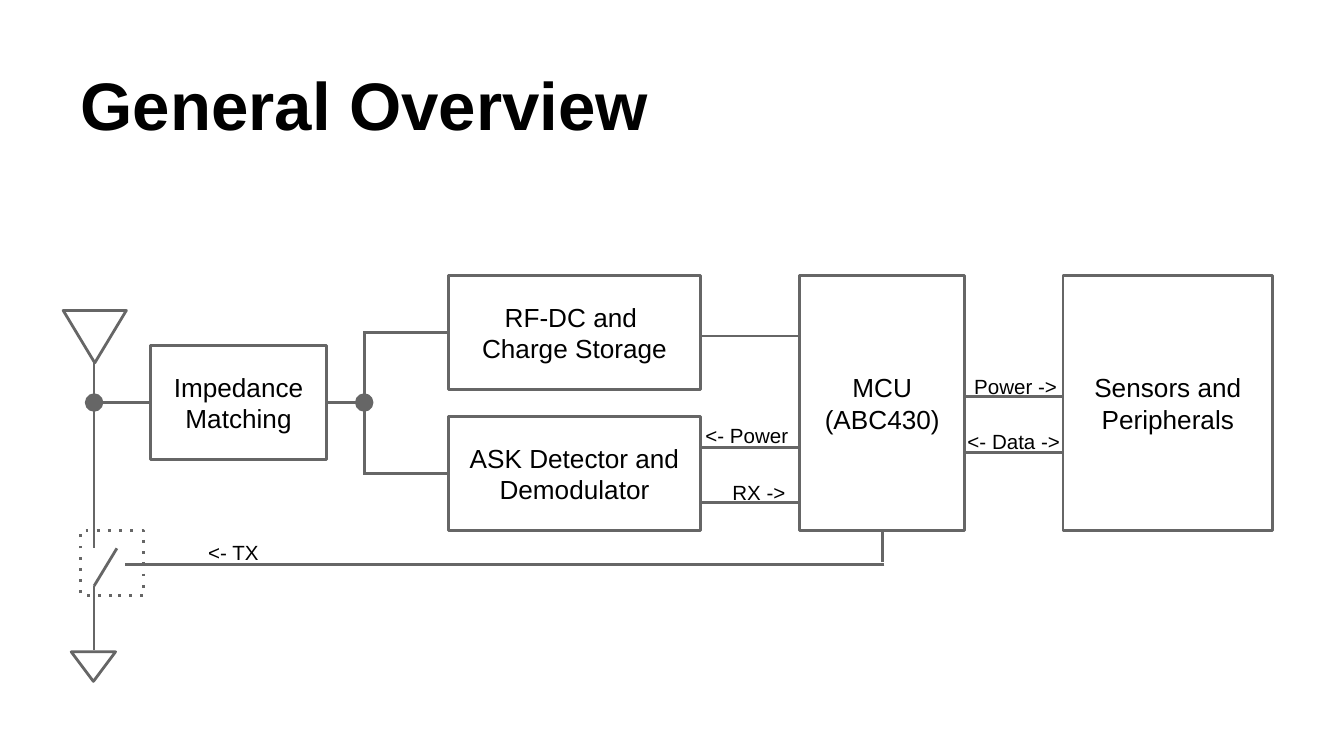
from dataclasses import dataclass

from lxml import etree
from pptx import Presentation
from pptx.dml.color import RGBColor
from pptx.enum.shapes import MSO_CONNECTOR, MSO_SHAPE
from pptx.enum.text import MSO_ANCHOR, MSO_AUTO_SIZE, PP_ALIGN
from pptx.oxml.ns import qn
from pptx.util import Inches, Pt

RECT = MSO_SHAPE.RECTANGLE
TRIANGLE = MSO_SHAPE.ISOSCELES_TRIANGLE
STRAIGHT = MSO_CONNECTOR.STRAIGHT
MIDDLE, BOTTOM = MSO_ANCHOR.MIDDLE, MSO_ANCHOR.BOTTOM
LEFT, CENTER = PP_ALIGN.LEFT, PP_ALIGN.CENTER
NO_FIT = MSO_AUTO_SIZE.NONE
LEFT_SIDE, BOTTOM_SIDE, RIGHT_SIDE = 1, 2, 3


@dataclass(frozen=True)
class Theme:
    font: str = "Arial"
    text: RGBColor = RGBColor(0, 0, 0)
    line: RGBColor = RGBColor(0x66, 0x66, 0x66)
    fill: RGBColor = RGBColor(0xFF, 0xFF, 0xFF)
    line_width: float = 1.5
    title_size: int = 36
    box_size: int = 14
    label_size: int = 11


THEME = Theme()


def write(sp, text, size, align=LEFT, anchor=None, bold=False):
    tf = sp.text_frame
    tf.word_wrap = True
    tf.auto_size = NO_FIT
    tf.margin_left = tf.margin_right = Inches(0.1)
    tf.margin_top = tf.margin_bottom = Inches(0.1)
    if anchor is not None:
        tf.vertical_anchor = anchor
    p = tf.paragraphs[0]
    p.text = text
    p.alignment = align
    for r in p.runs:
        r.font.name = THEME.font
        r.font.size = Pt(size)
        r.font.bold = bold
        r.font.color.rgb = THEME.text


def add_title(s, text):
    sp = s.shapes.title
    sp.left, sp.top = Inches(0.5), Inches(0.23)
    sp.width, sp.height = Inches(9), Inches(0.94)
    write(sp, text, THEME.title_size, anchor=BOTTOM, bold=True)


def style_line(sp):
    sp.line.color.rgb = THEME.line
    sp.line.width = Pt(THEME.line_width)


def add_line_detail(sp, tag, **attributes):
    ln = sp._element.spPr.find(qn("a:ln"))
    etree.SubElement(ln, qn(tag), attributes)


def add_outline(s, kind, x, y, w, h):
    sp = s.shapes.add_shape(kind, Inches(x), Inches(y), Inches(w), Inches(h))
    sp.shadow.inherit = False
    sp.fill.solid()
    sp.fill.fore_color.rgb = THEME.fill
    style_line(sp)
    return sp


def add_box(s, text, x, y, w, h):
    sp = add_outline(s, RECT, x, y, w, h)
    write(sp, text, THEME.box_size, CENTER, MIDDLE)
    return sp


def add_down_triangle(s, x, y, w, h):
    add_outline(s, TRIANGLE, x, y, w, h).rotation = 180


def add_switch_frame(s, x, y, w, h):
    sp = add_outline(s, RECT, x, y, w, h)
    sp.fill.background()
    add_line_detail(sp, "a:prstDash", val="dot")


def add_wire(s, x1, y1, x2, y2):
    c = s.shapes.add_connector(STRAIGHT, Inches(x1), Inches(y1), Inches(x2), Inches(y2))
    style_line(c)
    etree.SubElement(c._element.spPr, qn("a:effectLst"))
    return c


def add_joined_wire(s, box, side, x, y, dot=False):
    c = add_wire(s, x, y, x, y)
    c.begin_connect(box, side)
    if side == BOTTOM_SIDE:
        c.end_x = c.begin_x
    else:
        c.end_y = c.begin_y
    if dot:
        add_line_detail(c, "a:tailEnd", type="oval", w="lg", len="lg")


def add_label(s, text, x, y, w=0.85):
    sp = s.shapes.add_textbox(Inches(x), Inches(y), Inches(w), Inches(0.39))
    write(sp, text, THEME.label_size)


def add_antenna_branch(s):
    x = 0.7
    add_down_triangle(s, 0.47, 2.31, 0.47, 0.39)
    add_wire(s, x, 2.7, x, 4.08)
    add_wire(s, 0.87, 4.08, x, 4.36)
    add_wire(s, x, 4.36, x, 4.84)
    add_down_triangle(s, 0.53, 4.85, 0.33, 0.22)
    add_switch_frame(s, 0.6, 3.95, 0.47, 0.48)


def main():
    prs = Presentation()
    prs.slide_width = Inches(10)
    prs.slide_height = prs.slide_width * 9 // 16
    s = prs.slides.add_slide(prs.slide_layouts[5])
    add_title(s, "General Overview")
    add_antenna_branch(s)

    impedance = add_box(s, "Impedance Matching", 1.12, 2.57, 1.31, 0.85)
    rectifier = add_box(s, "RF-DC and \nCharge Storage", 3.34, 2.05, 1.87, 0.85)
    detector = add_box(s, "ASK Detector and\nDemodulator", 3.34, 3.1, 1.87, 0.85)
    mcu = add_box(s, "MCU\n(ABC430)", 5.95, 2.05, 1.23, 1.9)
    add_box(s, "Sensors and Peripherals", 7.91, 2.05, 1.56, 1.9)

    add_joined_wire(s, impedance, LEFT_SIDE, 0.7, 3, dot=True)
    add_joined_wire(s, impedance, RIGHT_SIDE, 2.71, 2.99, dot=True)
    add_wire(s, 2.71, 2.48, 2.71, 3.52)
    add_joined_wire(s, rectifier, LEFT_SIDE, 2.7, 2.47)
    add_joined_wire(s, detector, LEFT_SIDE, 2.7, 3.52)
    for y in (2.5, 3.33, 3.74):
        add_wire(s, 5.94, y, 5.21, y)
    for y in (2.95, 3.37):
        add_wire(s, 7.9, y, 7.17, y)
    add_joined_wire(s, mcu, BOTTOM_SIDE, 6.57, 4.18)
    add_wire(s, 6.58, 4.2, 0.93, 4.2)

    add_label(s, "RX ->", 5.35, 3.47)
    add_label(s, "<- Power", 5.15, 3.05)
    add_label(s, "Power ->", 7.15, 2.68)
    add_label(s, "<- Data ->", 7.1, 3.09, 1.01)
    add_label(s, "<- TX", 1.45, 3.92)
    prs.save("out.pptx")


if __name__ == "__main__":
    main()
